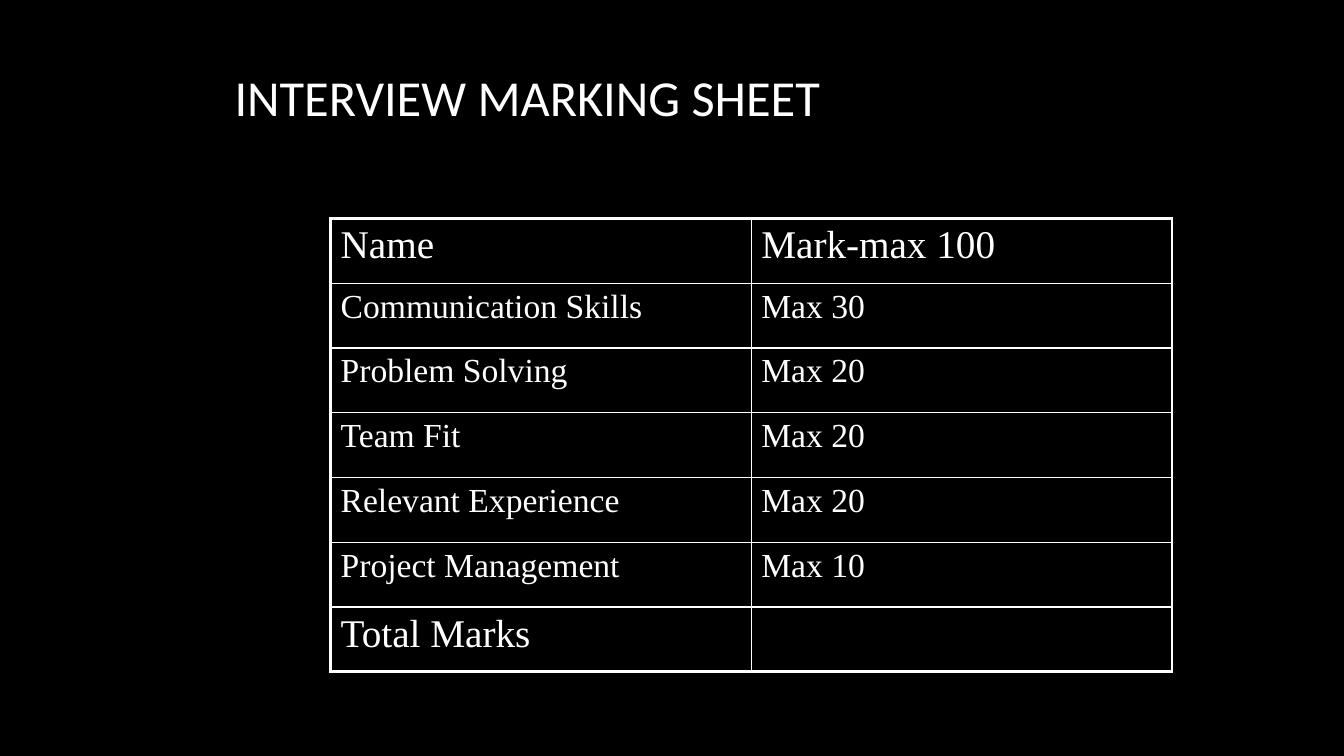
from lxml import etree
from pptx import Presentation, util as u
from pptx.dml.color import RGBColor
from pptx.enum import text
from pptx.oxml import ns

COLORS = {"background": "000000", "ink": "FFFFFF"}
CRITERIA = [
    ("Name", "Mark-max 100"),
    ("Communication Skills", "Max 30"),
    ("Problem Solving", "Max 20"),
    ("Team Fit", "Max 20"),
    ("Relevant Experience", "Max 20"),
    ("Project Management", "Max 10"),
    ("Total Marks", ""),
]


class MarkingSlide:
    title_font, table_font = "Calibri", "Times New Roman"
    title_size, outer_size, criterion_size = 36, 28, 24
    frame_width, rule_width = 2.25, 1

    def __init__(self, deck):
        self.width, self.height = deck.slide_width, deck.slide_height
        self.slide = deck.slides.add_slide(deck.slide_layouts[5])
        fill = self.slide.background.fill
        fill.solid()
        fill.fore_color.rgb = RGBColor.from_string(COLORS["background"])

    def area(self, left, top, width, height):
        return (round(left * self.width), round(top * self.height),
                round(width * self.width), round(height * self.height))

    def style(self, paragraph, font_name, size):
        paragraph.alignment = text.PP_ALIGN.LEFT
        font = paragraph.font
        font.name, font.size, font.bold = font_name, u.Pt(size), False
        font.color.rgb = RGBColor.from_string(COLORS["ink"])

    def title(self, heading, *shares):
        title = self.slide.shapes.title
        title.left, title.top, title.width, title.height = self.area(*shares)
        title.text_frame.text = heading
        title.text_frame.vertical_anchor = text.MSO_ANCHOR.MIDDLE
        self.style(title.text_frame.paragraphs[0], self.title_font, self.title_size)

    def border(self, cell, side, points):
        properties = cell._tc.get_or_add_tcPr()
        line = etree.SubElement(properties, ns.qn(f"a:ln{side}"), w=str(u.Pt(points)))
        fill = etree.SubElement(line, ns.qn("a:solidFill"))
        etree.SubElement(fill, ns.qn("a:srgbClr"), val=COLORS["ink"])

    def table(self, entries, *shares):
        last_row, last_column = len(entries) - 1, len(entries[0]) - 1
        table = self.slide.shapes.add_table(
            last_row + 1, last_column + 1, *self.area(*shares)).table
        table.first_row = table.horz_banding = False
        for row, entry in enumerate(entries):
            size = self.outer_size if row in (0, last_row) else self.criterion_size
            for column, wording in enumerate(entry):
                cell = table.cell(row, column)
                cell.text = wording
                self.style(cell.text_frame.paragraphs[0], self.table_font, size)
                on_frame = {"L": column == 0, "R": column == last_column,
                            "T": row == 0, "B": row == last_row}
                for side, framed in on_frame.items():
                    self.border(cell, side, self.frame_width if framed else self.rule_width)
                cell.fill.background()


def main():
    deck = Presentation()
    deck.slide_width, deck.slide_height = u.Inches(13.33), u.Inches(7.5)
    sheet = MarkingSlide(deck)
    sheet.title("INTERVIEW MARKING SHEET", 0.167, 0.044, 0.827, 0.167)
    sheet.table(CRITERIA, 0.246, 0.289, 0.626, 0.6)
    deck.save("out.pptx")


if __name__ == "__main__":
    main()
